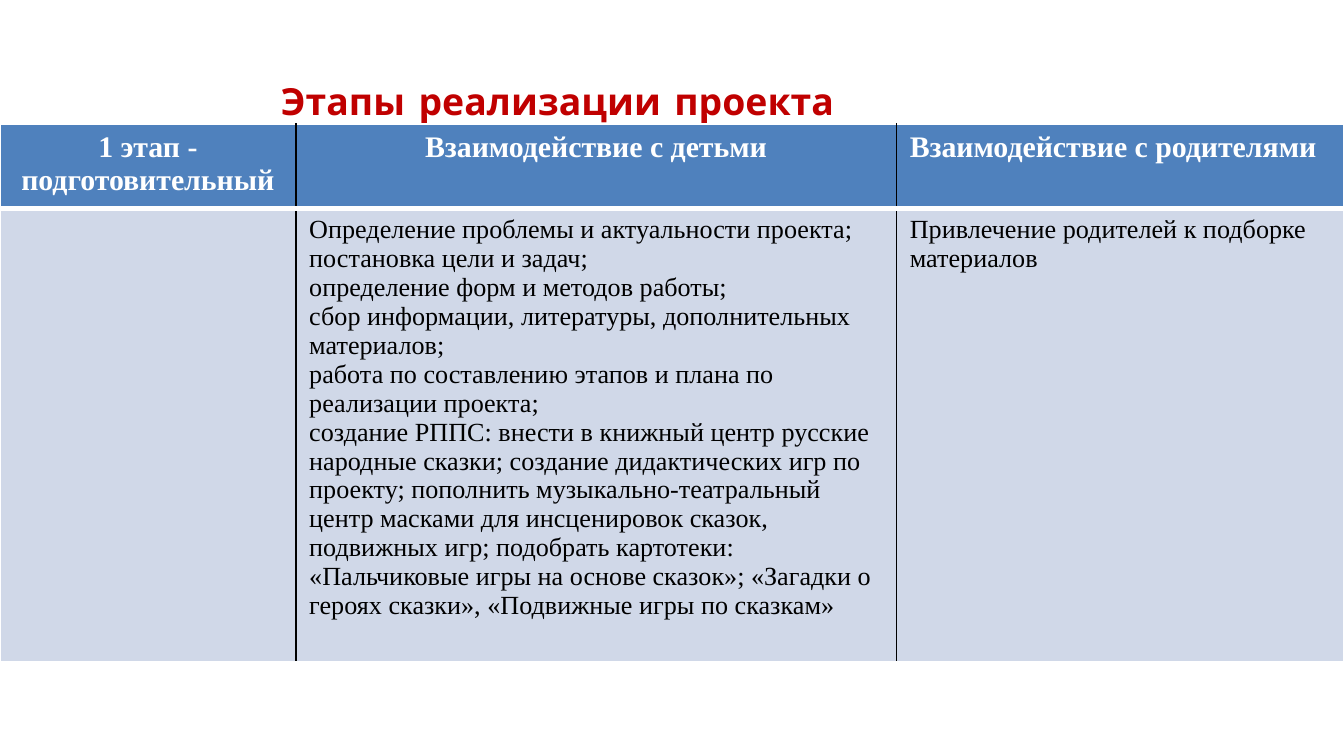
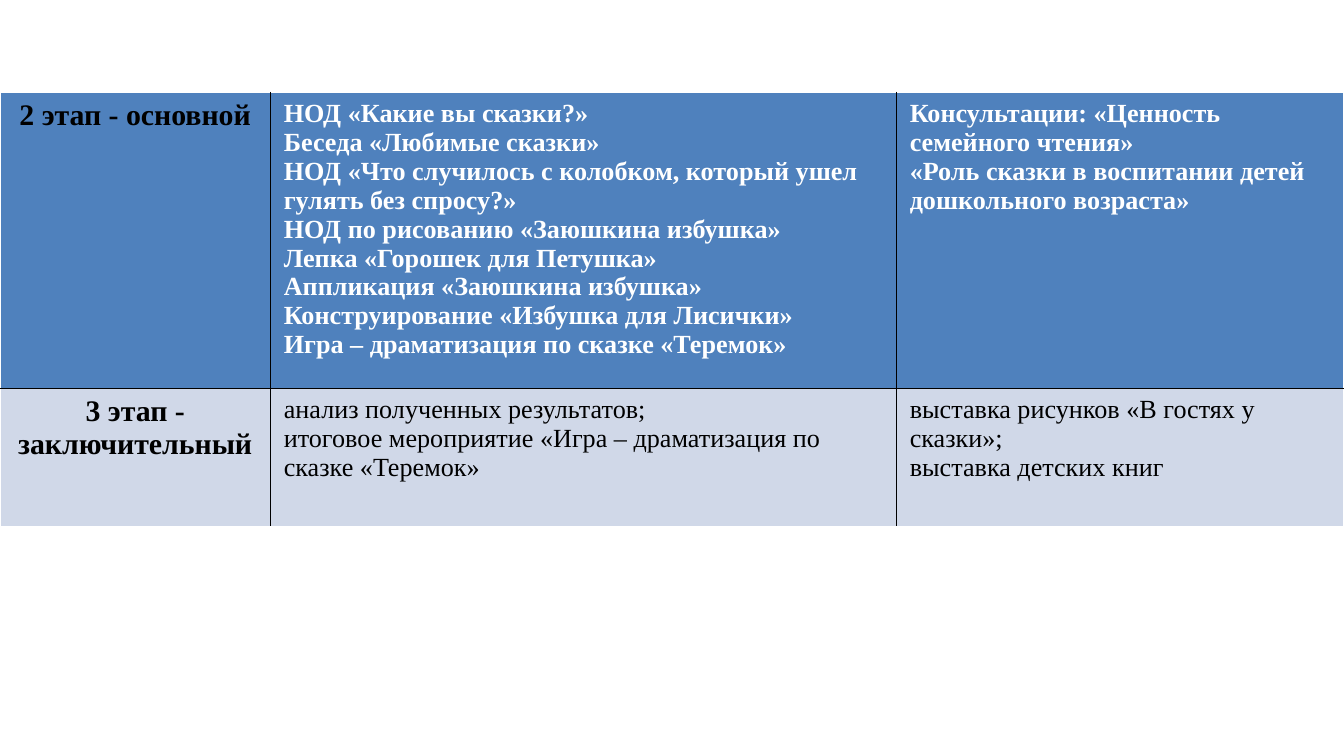
from dataclasses import dataclass

from lxml.etree import SubElement
from pptx import Presentation
from pptx.dml.color import RGBColor as Rgb
from pptx.enum.text import MSO_AUTO_SIZE as Fit, PP_ALIGN as Align
from pptx.oxml.ns import qn
from pptx.util import Cm, Pt

BLUE, PALE = "4F81BD", "D0D8E8"
WHITE, BLACK, RED = "FFFFFF", "000000", "C00000"
FILLS = (BLUE, PALE)


@dataclass
class Item:
    """Text of one table cell and its format."""
    text: str = ""
    size: int = 14
    color: str = BLACK
    bold: bool = False
    align: Align = Align.LEFT


@dataclass
class Grid:
    """Place, rows and middle line of one table, lengths in cm."""
    top: float
    cols: tuple[float, ...]
    rows: tuple[float, ...]
    rule: tuple[str, int]
    items: list[list[Item]]


def head(text: str, color: str = WHITE, align: Align = Align.CENTER) -> Item:
    """Make a large bold cell."""
    return Item(text, 16, color, True, align)


STAGES = [
    Grid(2.34, (5.59, 11.35, 8.46), (1.6, 8.53), (WHITE, 3), [
        [
            head("1 этап - подготовительный"),
            head("Взаимодействие с детьми"),
            head("Взаимодействие с родителями", align=Align.LEFT),
        ],
        [
            Item(),
            Item("Определение проблемы и актуальности проекта;\n"
                 "постановка цели и задач;\n"
                 "определение форм и методов работы;\n"
                 "сбор информации, литературы, дополнительных материалов;\n"
                 "работа по составлению этапов и плана по реализации проекта;\n"
                 "создание РППС: внести в книжный центр русские народные сказки; "
                 "создание дидактических игр по проекту; пополнить "
                 "музыкально-театральный центр масками для инсценировок сказок, "
                 "подвижных игр; подобрать картотеки: «Пальчиковые игры на основе "
                 "сказок»; «Загадки о героях сказки», «Подвижные игры по сказкам»"),
            Item("Привлечение родителей к подборке материалов"),
        ],
    ]),
    Grid(1.75, (5.11, 11.83, 8.46), (5.58, 2.62), (BLACK, 1), [
        [
            head("2 этап - основной", BLACK),
            Item("НОД «Какие вы сказки?»\n"
                 "Беседа «Любимые сказки»\n"
                 "НОД «Что случилось с колобком, который ушел гулять без спросу?»\n"
                 "НОД по рисованию «Заюшкина избушка»\n"
                 "Лепка «Горошек для Петушка»\n"
                 "Аппликация «Заюшкина избушка»\n"
                 "Конструирование «Избушка для Лисички»\n"
                 "Игра – драматизация по сказке «Теремок»", color=WHITE, bold=True),
            Item("Консультации: «Ценность семейного чтения»\n"
                 "«Роль сказки в воспитании детей дошкольного возраста»",
                 color=WHITE, bold=True),
        ],
        [
            head("3 этап - заключительный", BLACK),
            Item("анализ полученных результатов;\n"
                 "итоговое мероприятие «Игра – драматизация по сказке «Теремок»"),
            Item("выставка рисунков «В гостях у сказки»;\n"
                 "выставка детских книг"),
        ],
    ]),
]


def tint(code: str) -> Rgb:
    """Turn a hex string into a colour."""
    return Rgb.from_string(code)


def write(frame, text: str, *, size: int, color: str, bold: bool,
          align: Align = Align.LEFT, font: str = "Times New Roman") -> None:
    """Fill a text frame, one paragraph a line."""
    frame.text = text
    for para in frame.paragraphs:
        para.alignment = align
        face = para.font
        face.name, face.size, face.bold = font, Pt(size), bold
        face.color.rgb = tint(color)


def edge(cell, side: str, color: str, width: int) -> None:
    """Draw one border of a cell."""
    line = SubElement(cell._tc.get_or_add_tcPr(), qn(f"a:ln{side}"), w=str(Pt(width)))
    fill = SubElement(line, qn("a:solidFill"))
    SubElement(fill, qn("a:srgbClr"), val=color)


def draw(slide, grid: Grid) -> None:
    """Draw a stage table across the slide."""
    rows, cols = len(grid.rows), len(grid.cols)
    table = slide.shapes.add_table(rows, cols, Cm(0), Cm(grid.top),
                                   Cm(sum(grid.cols)), Cm(sum(grid.rows))).table
    for col, width in zip(table.columns, grid.cols):
        col.width = Cm(width)
    for row, height in zip(table.rows, grid.rows):
        row.height = Cm(height)
    outer, inner = (WHITE, 1), (BLACK, 1)
    for r, line in enumerate(grid.items):
        for c, item in enumerate(line):
            cell = table.cell(r, c)
            write(cell.text_frame, item.text, size=item.size, color=item.color,
                  bold=item.bold, align=item.align)
            edge(cell, "L", *(inner if c else outer))
            edge(cell, "R", *(inner if c < cols - 1 else outer))
            edge(cell, "T", *(grid.rule if r else outer))
            edge(cell, "B", *(grid.rule if r < rows - 1 else outer))
            cell.fill.solid()
            cell.fill.fore_color.rgb = tint(FILLS[r])


def title(slide, text: str) -> None:
    """Add the red title."""
    frame = slide.shapes.add_textbox(Cm(4.09), Cm(1.35), Cm(15.6), Cm(1.12)).text_frame
    frame.word_wrap = True
    frame.auto_size = Fit.SHAPE_TO_FIT_TEXT
    frame.margin_left = Cm(1.22)
    write(frame, text, size=20, color=RED, bold=True, font="Comic Neue")


def main() -> None:
    """Build the deck."""
    deck = Presentation()
    deck.slide_width, deck.slide_height = Cm(25.4), Cm(14.29)
    first, second = (deck.slides.add_slide(deck.slide_layouts[6]) for _ in STAGES)
    title(first, "Этапы реализации проекта")
    for slide, grid in zip((first, second), STAGES):
        draw(slide, grid)
    deck.save("out.pptx")


if __name__ == "__main__":
    main()
